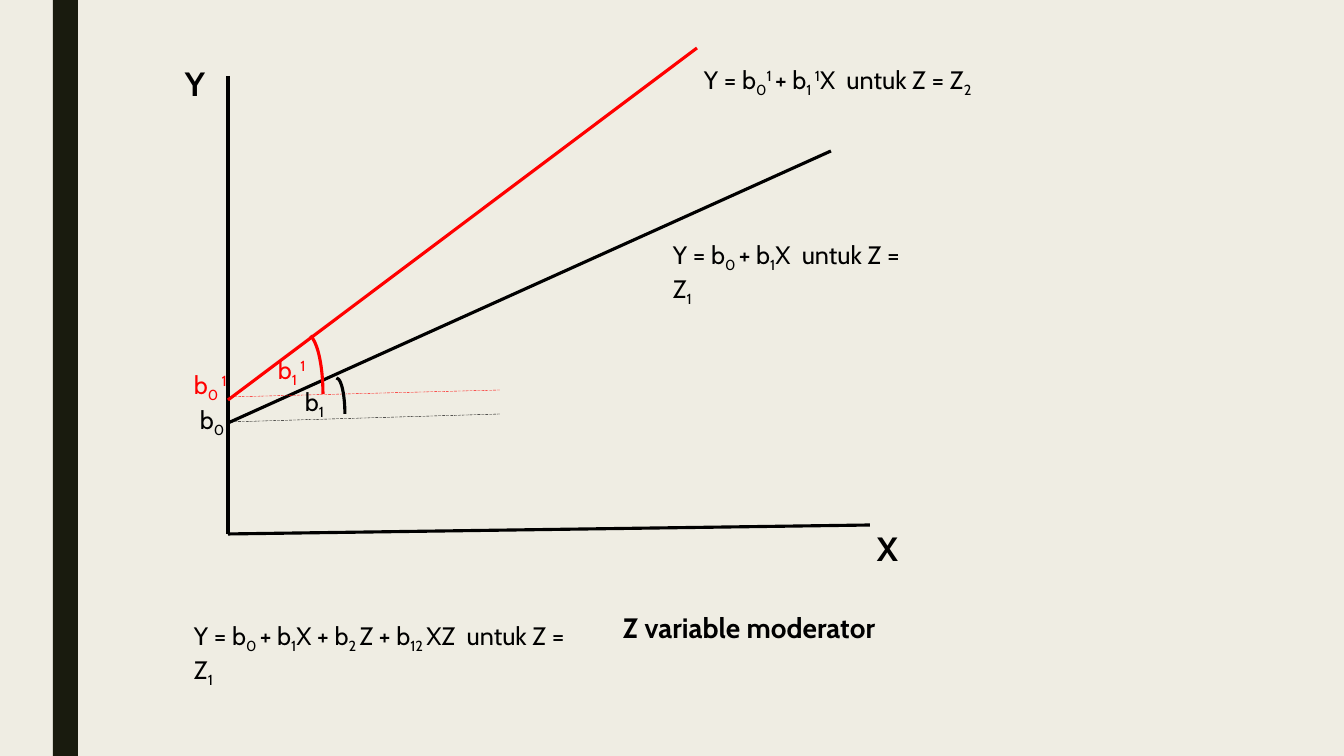
from lxml import etree
from pptx import Presentation
from pptx.dml.color import RGBColor
from pptx.enum.dml import MSO_LINE
from pptx.enum.shapes import MSO_CONNECTOR, MSO_SHAPE
from pptx.oxml.ns import qn
from pptx.util import Pt

RECT, ARC = MSO_SHAPE.RECTANGLE, MSO_SHAPE.ARC
LINE, DASH = MSO_CONNECTOR.STRAIGHT, MSO_LINE.LONG_DASH
BLACK = RGBColor(0x00, 0x00, 0x00)
RED = RGBColor(0xFF, 0x00, 0x00)
CREAM = RGBColor(0xEF, 0xED, 0xE3)
OLIVE = RGBColor(0x19, 0x1B, 0x0E)
SHIFTS = {"_": "-25000", "^": "30000"}


def px(*sizes):
    """Turn pixel lengths into EMU."""
    return [round(size * 914400 / 100.8) for size in sizes]


def label(slide, box, text, color=BLACK, size=18, bold=False, wrap=False):
    """Place text whose parts split at |, with _ for subscript and ^ for superscript."""
    frame = slide.shapes.add_textbox(*px(*box)).text_frame
    frame.word_wrap = wrap
    style = {"name": "Cabin", "size": Pt(size), "bold": bold}
    for part in text.split("|"):
        run = frame.paragraphs[0].add_run()
        run.text = part.lstrip("_^")
        for key, value in style.items():
            setattr(run.font, key, value)
        run.font.color.rgb = color
        if part[0] in SHIFTS:
            run._r.get_or_add_rPr().set("baseline", SHIFTS[part[0]])


def line(slide, start, end, color=BLACK, width=2.25, dash=None):
    """Draw a straight line between two points."""
    stroke = slide.shapes.add_connector(LINE, *px(*start, *end))
    etree.SubElement(stroke._element.spPr, qn("a:effectLst"))
    stroke.line.color.rgb = color
    stroke.line.width = Pt(width)
    if dash:
        stroke.line.dash_style = dash


def arc(slide, box, color, start=None):
    """Draw an angle mark as a quarter arc."""
    mark = slide.shapes.add_shape(ARC, *px(*box))
    mark.shadow.inherit = False
    mark.fill.background()
    mark.line.color.rgb = color
    mark.line.width = Pt(2.25)
    if start:
        mark.adjustments[0] = start


def side_bar(slide, box):
    """Draw the dark band at the left."""
    band = slide.shapes.add_shape(RECT, *px(*box))
    band.shadow.inherit = False
    band.fill.solid()
    band.fill.fore_color.rgb = OLIVE
    band.line.fill.background()


def graph(slide, box):
    """Draw the axes, both regression lines and their labels."""
    x, y, wide, high = box
    base = y + high
    line(slide, (x, y), (x, base))
    line(slide, (x + wide, base - 9), (x, base))
    label(slide, (x + wide - 3, base - 11, 39, 50), "X", size=24, bold=True)
    label(slide, (x - 53, y - 18, 38, 50), "Y", size=24, bold=True)

    for color, end, cut, dash_end, dash_cut in (
        (BLACK, (603, 75), 347, 338, 346),
        (RED, (469, -28), 324, 314, 321),
    ):
        line(slide, (x + end[0], y + end[1]), (x, y + cut), color)
        line(slide, (x + 272, y + dash_end), (x, y + dash_cut), color, 0.25, DASH)

    arc(slide, (x + 100, y + 302, 17, 72), BLACK)
    arc(slide, (x + 62, y + 258, 33, 120), RED, 164.36)

    for left, top, wide, text, color, wrap in (
        (435, 158, 264, "Y = b|_0 |+ b|_1|X  untuk Z = Z|_1", BLACK, True),
        (466, -17, 292, "Y = b|_0|^1 |+ b|_1 |^1|X  untuk Z = Z|_2", BLACK, False),
        (67, 305, 49, "b|_1", BLACK, True),
        (40, 273, 59, "b|_1 |^1", RED, True),
        (-38, 323, 59, "b|_0", BLACK, True),
        (-44, 288, 74, "b|_0 |^1", RED, True),
    ):
        label(slide, (x + left, y + top, wide, 40), text, color, wrap=wrap)


def model(slide, box):
    """Place the full model and the moderator note below the graph."""
    x, y, wide, high = box
    label(slide, (x, y + 9, 415, high - 4),
          "Y = b|_0 |+ b|_1|X + b|_2 |Z + b|_12 |XZ  untuk Z = Z|_1")
    label(slide, (x + wide - 273, y, 273, high), "Z variable moderator",
          size=20, bold=True)


def main():
    """Build and save the slide."""
    deck = Presentation()
    deck.slide_width, deck.slide_height = px(1344, 756)
    slide = deck.slides.add_slide(deck.slide_layouts[6])
    slide.background.fill.solid()
    slide.background.fill.fore_color.rgb = CREAM
    side_bar(slide, (53, 0, 25, 756))
    graph(slide, (228, 76, 642, 458))
    model(slide, (184, 606, 702, 44))
    deck.save("out.pptx")


if __name__ == "__main__":
    main()
